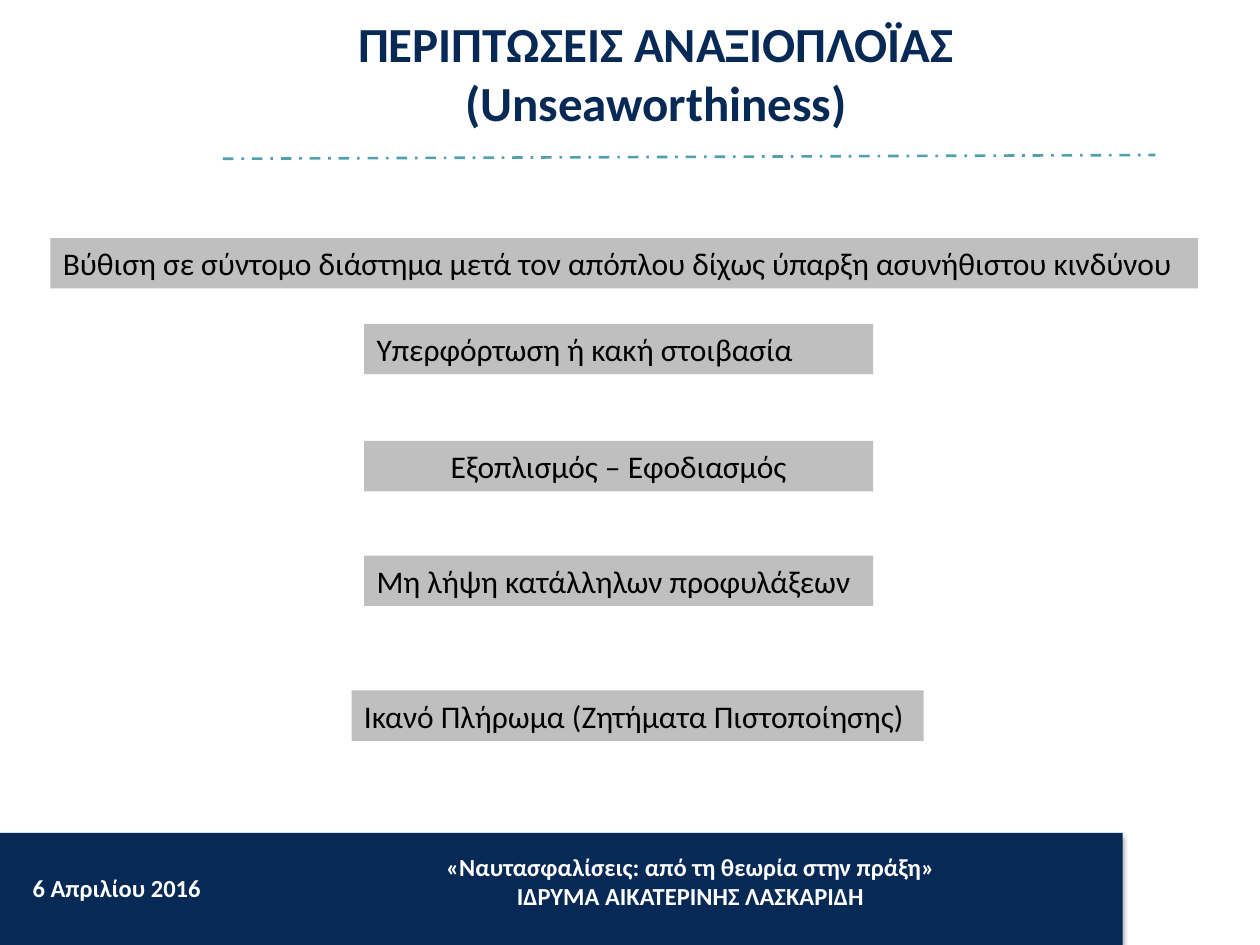
from dataclasses import dataclass

from lxml import etree
from pptx import Presentation
from pptx import util as u
from pptx.dml.color import RGBColor
from pptx.enum import dml, shapes, text
from pptx.oxml import parse_xml
from pptx.oxml.ns import nsdecls, qn


@dataclass(frozen=True)
class Theme:
    font: str = "Calibri"
    navy: str = "072956"
    teal: str = "50A0B0"
    grey: str = "BFBFBF"
    black: str = "000000"
    white: str = "FFFFFF"
    title_size: int = 28
    body_size: int = 18
    footer_size: int = 14


SHADOW = (
    f'<a:effectLst {nsdecls("a")}><a:outerShdw blurRad="{u.Pt(3.1)}" dist="{u.Pt(1.8)}" '
    'dir="5400000" algn="ctr" rotWithShape="0"><a:srgbClr val="000000">'
    '<a:alpha val="35000"/></a:srgbClr></a:outerShdw></a:effectLst>'
)


def write(frame, content, *, font, size, color, bold=False, align=text.PP_ALIGN.LEFT,
          anchor=text.MSO_ANCHOR.TOP):
    frame.word_wrap = True
    frame.auto_size = text.MSO_AUTO_SIZE.NONE
    frame.vertical_anchor = anchor
    frame.text = content
    for paragraph in frame.paragraphs:
        paragraph.alignment = align
        paragraph.font.name = font
        paragraph.font.size = u.Pt(size)
        paragraph.font.bold = bold
        paragraph.font.color.rgb = RGBColor.from_string(color)


class SlideBuilder:
    def __init__(self, presentation, theme):
        self.theme = theme
        self.slide = presentation.slides.add_slide(presentation.slide_layouts[5])

    def title(self, content, left, top, width, height):
        shape = self.slide.shapes.title
        shape.left, shape.top = u.Inches(left), u.Inches(top)
        shape.width, shape.height = u.Inches(width), u.Inches(height)
        write(shape.text_frame, content, font=self.theme.font, size=self.theme.title_size,
              color=self.theme.navy, bold=True, align=text.PP_ALIGN.CENTER)

    def box(self, left, top, width, height, fill):
        shape = self.slide.shapes.add_shape(
            shapes.MSO_SHAPE.RECTANGLE,
            u.Inches(left), u.Inches(top), u.Inches(width), u.Inches(height))
        shape.shadow.inherit = False
        shape.fill.solid()
        shape.fill.fore_color.rgb = RGBColor.from_string(fill)
        shape.line.fill.background()
        return shape

    def footer_bar(self, left, top, width, height):
        properties = self.box(left, top, width, height, self.theme.navy)._element.spPr
        properties.replace(properties.find(qn("a:effectLst")), parse_xml(SHADOW))

    def divider(self, start, end):
        line = self.slide.shapes.add_connector(
            shapes.MSO_CONNECTOR.STRAIGHT, *(u.Inches(value) for value in start + end))
        line.line.color.rgb = RGBColor.from_string(self.theme.teal)
        line.line.width = u.Pt(1.5)
        line.line.dash_style = dml.MSO_LINE.DASH_DOT
        etree.SubElement(line._element.spPr, qn("a:effectLst"))

    def case(self, content, left, top, width, align=text.PP_ALIGN.LEFT):
        shape = self.box(left, top, width, 0.4, self.theme.grey)
        write(shape.text_frame, content, font=self.theme.font, size=self.theme.body_size,
              color=self.theme.black, align=align)

    def footer_text(self, content, left, top, width, height, align=text.PP_ALIGN.LEFT):
        shape = self.slide.shapes.add_textbox(
            u.Inches(left), u.Inches(top), u.Inches(width), u.Inches(height))
        write(shape.text_frame, content, font=self.theme.font, size=self.theme.footer_size,
              color=self.theme.white, bold=True, align=align)


def main():
    presentation = Presentation()
    presentation.slide_width = u.Inches(10)
    presentation.slide_height = u.Inches(7.5)
    builder = SlideBuilder(presentation, Theme())
    center = text.PP_ALIGN.CENTER

    builder.footer_bar(0, 6.61, 8.91, 0.89)
    builder.divider((1.77, 1.26), (9.17, 1.23))
    builder.title("ΠΕΡΙΠΤΏΣΕΙΣ ΑΝΑΞΙΟΠΛΟΪΑΣ (Unseaworthiness)", 1.9, 0.06, 6.61, 1.04)
    builder.footer_text("6 Aπριλίου 2016", 0.16, 6.88, 2.01, 0.34)
    builder.footer_text(
        "«Ναυτασφαλίσεις: από τη θεωρία στην πράξη»\nΙΔΡΥΜΑ ΑΙΚΑΤΕΡΙΝΗΣ ΛΑΣΚΑΡΙΔΗ",
        2.89, 6.71, 5.18, 0.57, center)

    builder.case("Βύθιση σε σύντομο διάστημα μετά τον απόπλου δίχως ύπαρξη ασυνήθιστου κινδύνου",
                 0.4, 1.89, 9.11)
    builder.case("Υπερφόρτωση ή κακή στοιβασία", 2.89, 2.57, 4.04)
    builder.case("Εξοπλισμός – Εφοδιασμός", 2.89, 3.5, 4.04, center)
    builder.case("Μη λήψη κατάλληλων προφυλάξεων", 2.89, 4.41, 4.04)
    builder.case("Ικανό Πλήρωμα (Ζητήματα Πιστοποίησης)", 2.79, 5.48, 4.54)

    presentation.save("out.pptx")


if __name__ == "__main__":
    main()
